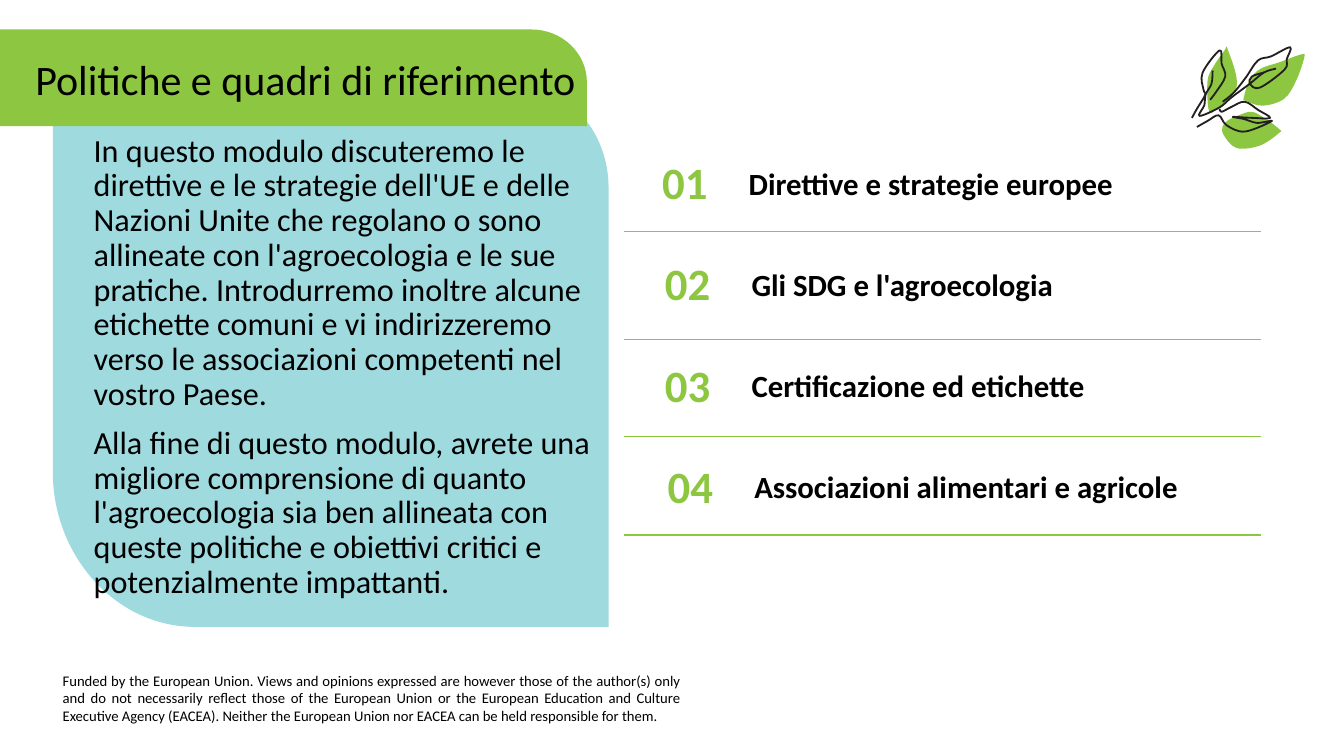
from itertools import chain

from lxml.etree import SubElement
from pptx import Presentation
from pptx.dml.color import RGBColor
from pptx.enum.shapes import MSO_CONNECTOR as Connector
from pptx.enum.text import MSO_ANCHOR as Anchor, MSO_AUTO_SIZE as AutoSize, PP_ALIGN as Align
from pptx.oxml import parse_xml
from pptx.oxml.ns import nsdecls, qn
from pptx.util import Pt

GREEN, BLUE, INK, BLACK = "8DC641", "9FDADF", "231F20", "000000"

TITLE = "Politiche e quadri di riferimento"
INTRO = [
    "In questo modulo discuteremo le direttive e le strategie dell'UE e delle Nazioni Unite che regolano o sono "
    "allineate con l'agroecologia e le sue pratiche. Introdurremo inoltre alcune etichette comuni e vi "
    "indirizzeremo verso le associazioni competenti nel vostro Paese.",
    "Alla fine di questo modulo, avrete una migliore comprensione di quanto l'agroecologia sia ben allineata con "
    "queste politiche e obiettivi critici e potenzialmente impattanti.",
]
TOPICS = [
    ("Direttive e strategie europee", 0, 165.4),
    ("Gli SDG e l'agroecologia", 2, 242.6),
    ("Certificazione ed etichette", 2, 312),
    ("Associazioni alimentari e agricole", 4, 382.3),
]
DISCLAIMER = (
    "Funded by the European Union. Views and opinions expressed are however those of the author(s) only and do not "
    "necessarily reflect those of the European Union or the European Education and Culture Executive Agency (EACEA). "
    "Neither the European Union nor EACEA can be held responsible for them."
)
LEAVES = [
    [(17.6, 47.2), (33.4, 29.9), (27, 3.3), (24.8, 4), (16.9, 15.5), (12.6, 25.6), (13.3, 45.8)],
    [(67.3, 38.6), (75.9, 25.6), (81.7, 9), (79.5, 6.9), (63.7, 12.6), (50.7, 17), (42.8, 24.9),
     (38.5, 37.8), (39.9, 40), (52, 43.5)],
    [(63.7, 63), (63.7, 60.2), (52.9, 52.2), (44.2, 47.9), (35.6, 50.1), (27.7, 53.7), (23.4, 58),
     (24.1, 64.5), (33.4, 73.8), (50, 72)],
]
STROKES = [
    [(1.4, 52.2), (5.4, 45), (9, 39.3), (11.1, 35), (9.7, 32.1), (9, 20), (21.2, 4), (22.6, 13.4),
     (25.2, 22.7), (18.3, 34.2), (14.4, 39.3)],
    [(16.2, 18.4), (15.4, 27.8), (11.1, 35.7), (10.4, 42.9), (6.8, 50.8), (21.2, 44.7), (29.8, 37.5),
     (42.8, 27.8), (52.9, 19.8), (61.5, 17)],
    [(23.4, 40.7), (31.3, 34.2), (39.9, 23.4), (48.6, 11.2), (57.9, 8.3), (71.6, 1.8), (69.1, 10.5),
     (67.6, 17.7), (50, 30.6), (42.8, 27.8), (44.2, 22.7), (52.9, 19.8)],
    [(5, 58.7), (12.6, 54.4), (20.5, 50.4), (26.2, 57.5), (39.2, 62), (58.6, 54.4), (47.9, 55.8),
     (38.5, 53), (30.6, 51.5), (44.2, 52.2), (57.2, 52.2), (48.6, 46.5), (39.2, 40.7), (29.8, 44.3),
     (22.6, 47.9), (21.2, 45.8)],
]


def colour(value):
    return RGBColor.from_string(value)


def draw_outline(shapes, contours, fill=None, line=None):
    builder = None
    for start, *segments in contours:
        corners = [(Pt(x), Pt(y)) for x, y in (start, *chain(*segments))]
        if builder:
            builder.move_to(*corners[0])
        else:
            builder = shapes.build_freeform(*corners[0])
        builder.add_line_segments(corners[1:], close=fill is not None)
    shape = builder.convert_to_shape()
    bend_segments(shape, [segment for contour in contours for segment in contour[1:]])
    shape.shadow.inherit = False
    if fill:
        shape.fill.solid()
        shape.fill.fore_color.rgb = colour(fill)
        shape.line.fill.background()
    else:
        shape.fill.background()
        shape.line.color.rgb = colour(line)
        shape.line.width = Pt(1.3)


def bend_segments(shape, segments):
    straights = iter(list(shape.element.iter(qn("a:lnTo"))))
    for segment in segments:
        steps = [next(straights) for _ in segment]
        if len(steps) == 3:
            curve = parse_xml(f"<a:cubicBezTo {nsdecls('a')}/>")
            steps[0].addprevious(curve)
            for step in steps:
                curve.append(step[0])
                step.getparent().remove(step)


def corner_curve(start, corner, end):
    handles = [tuple(p + 0.55 * (c - p) for p, c in zip(point, corner)) for point in (start, end)]
    return [*handles, end]


def smooth_contour(knots, left, top, closed):
    knots = [(left + x, top + y) for x, y in knots]
    padded = [knots[-1], *knots, *knots[:2]] if closed else [knots[0], *knots, knots[-1]]
    contour = [knots[0]]
    for before, start, end, after in zip(padded, padded[1:], padded[2:], padded[3:]):
        first = tuple(s + (e - b) / 6 for b, s, e in zip(before, start, end))
        second = tuple(e - (a - s) / 6 for s, e, a in zip(start, end, after))
        contour.append([first, second, end])
    return contour


def write_text(box, place, texts, size, ink=BLACK, bold=False, align=Align.LEFT, anchor=Anchor.MIDDLE, spacing=0.9):
    box.left, box.top, box.width, box.height = map(Pt, place)
    frame = box.text_frame
    frame.word_wrap = True
    frame.auto_size = AutoSize.NONE
    frame.vertical_anchor = anchor
    frame.text = "\n".join(texts)
    for index, para in enumerate(frame.paragraphs):
        para.alignment = align
        para.line_spacing = spacing
        para.space_before = Pt(10 if index else 0)
        for span in para.runs:
            span.font.name = "Calibri"
            span.font.size = Pt(size)
            span.font.bold = bold
            span.font.color.rgb = colour(ink)


def add_text(page, place, texts, size, **style):
    write_text(page.shapes.add_textbox(0, 0, 0, 0), place, texts, size, **style)


def add_intro(page, left, top, width, height):
    right, bottom = left + width, top + height
    upper = corner_curve((right - 69, top), (right, top), (right, top + 75))
    lower = corner_curve((left + 101.5, bottom), (left, bottom), (left, bottom - 111))
    panel = [(left, top), [(right - 69, top)], upper, [(right, bottom)], [(left + 101.5, bottom)], lower]
    draw_outline(page.shapes, [panel], fill=BLUE)
    add_text(page, (left + 22.1, top + 33.4, 393.8, 324.7), INTRO, 23, anchor=Anchor.TOP)


def add_title(page, left, top, width, height):
    right, bottom = left + width, top + height
    corner = corner_curve((right - 39.5, top), (right, top), (right, top + 37.5))
    banner = [(left, top), [(right - 39.5, top)], corner, [(right, bottom)], [(left, bottom)]]
    draw_outline(page.shapes, [banner], fill=GREEN)
    title = page.shapes.title
    title.element.getparent().append(title.element)
    write_text(title, (left + 19.4, top + 8.6, 445, 56.9), [TITLE], 30)


def add_topics(page, left, top, width):
    for index, (label, shift, rule_y) in enumerate(TOPICS):
        row_left, row_top = left + shift, top + 72.2 * index
        add_text(page, (row_left + 15.8, row_top, 55.4, 54), [f"{index + 1:02}"], 32,
                 ink=GREEN, bold=True, align=Align.CENTER)
        add_text(page, (row_left + 82, row_top, 351.4, 54), [label], 22, bold=True)
        rule = page.shapes.add_connector(Connector.STRAIGHT, Pt(left + width), Pt(rule_y), Pt(left), Pt(rule_y))
        rule.line.color.rgb = colour(GREEN)
        rule.line.width = Pt(1)
        SubElement(rule.element.spPr, qn("a:effectLst"))


def add_sprig(page, left, top):
    sprig = page.shapes.add_group_shape()
    for knots in LEAVES:
        draw_outline(sprig.shapes, [smooth_contour(knots, left, top, True)], fill=GREEN)
    draw_outline(sprig.shapes, [smooth_contour(knots, left, top, False) for knots in STROKES], line=INK)


def main():
    deck = Presentation()
    deck.slide_width, deck.slide_height = Pt(960), Pt(540)
    page = deck.slides.add_slide(deck.slide_layouts[5])
    add_intro(page, 37.7, 59, 397, 388.8)
    add_title(page, -1.4, 21.1, 420.6, 69)
    add_topics(page, 445.7, 105.4, 455)
    add_text(page, (37.7, 476.2, 455.8, 47.5), [DISCLAIMER], 10.5, align=Align.JUSTIFY, anchor=Anchor.TOP, spacing=1)
    add_sprig(page, 850, 32)
    deck.save("out.pptx")


if __name__ == "__main__":
    main()
